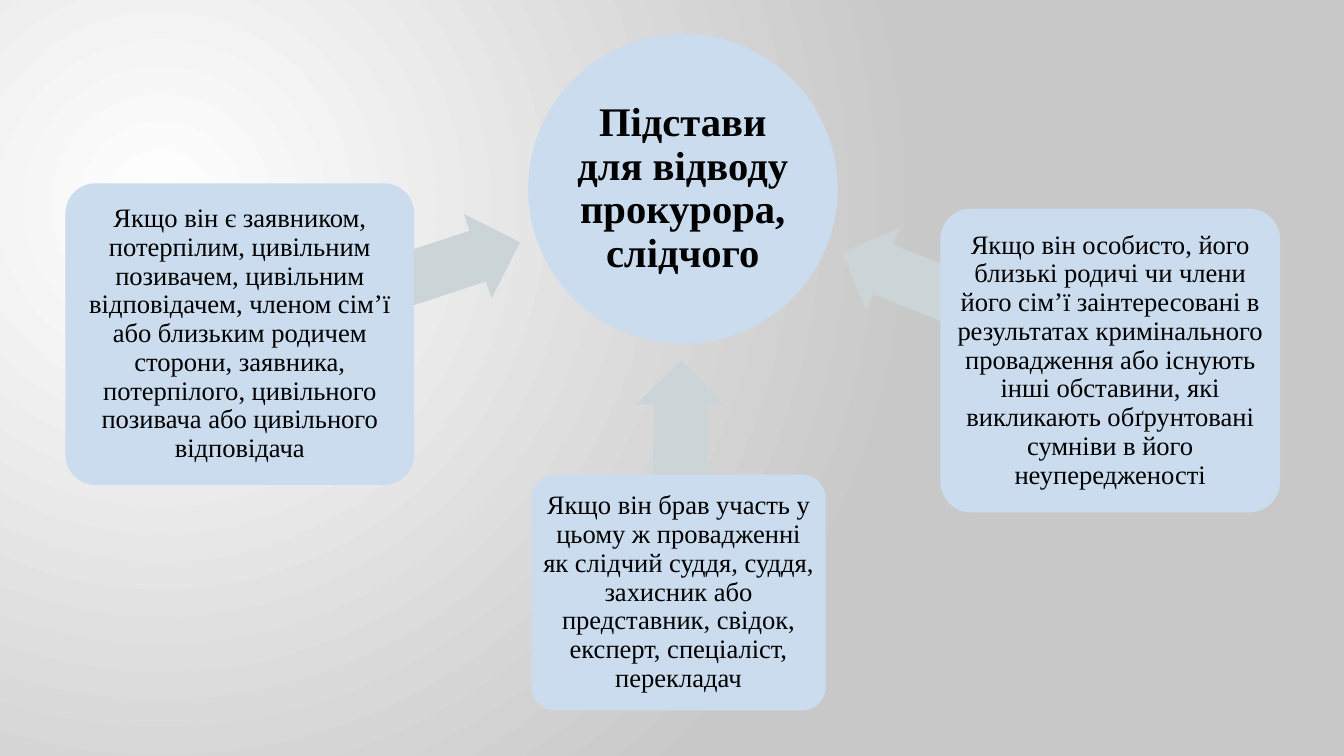
"""Build a slide where three grounds for recusal point to a central circle."""
import math

from lxml import etree
from pptx import Presentation
from pptx import util as u
from pptx.dml.color import RGBColor
from pptx.enum import shapes, text
from pptx.oxml.ns import qn

TOPIC = "Підстави для відводу прокурора, слідчого"
TOPIC_BOX = (13.31, 0.86, 7.8, 7.8)
GROUNDS = [
    ("Якщо він є заявником, потерпілим, цивільним позивачем, цивільним відповідачем, "
     "членом сім’ї або близьким родичем сторони, заявника, потерпілого, цивільного "
     "позивача або цивільного відповідача", (1.65, 4.62, 8.79, 7.6)),
    ("Якщо він брав участь у цьому ж провадженні як слідчий суддя, суддя, захисник або "
     "представник, свідок, експерт, спеціаліст, перекладач", (13.39, 11.96, 7.42, 5.94)),
    ("Якщо він особисто, його близькі родичі чи члени його сім’ї заінтересовані в "
     "результатах кримінального провадження або існують інші обставини, які викликають "
     "обґрунтовані сумніви в його неупередженості", (23.7, 5.26, 8.56, 7.65)),
]
ARROW_HEIGHT = 2.24
ARROW_GAP = 0.42
FONT = "Times New Roman"
BLUE = RGBColor(0xCA, 0xDC, 0xEE)
ARROW_GRAY = RGBColor(0xCB, 0xD4, 0xD7)
BLACK = RGBColor(0, 0, 0)
WHITE = RGBColor(0xFF, 0xFF, 0xFF)
BACKGROUND_GRAY = RGBColor(0xC8, 0xC8, 0xC8)
GLOW_CENTRE = {"l": "50000", "t": "55000", "r": "125000", "b": "100000"}


def set_background(slide):
    fill = slide.background.fill
    fill.gradient()
    for stop, position, color in zip(fill.gradient_stops, (0, 1), (WHITE, BACKGROUND_GRAY)):
        stop.position = position
        stop.color.rgb = color
    gradient = slide.element.find(".//" + qn("a:gradFill"))
    gradient.remove(gradient.find(qn("a:lin")))
    glow = etree.SubElement(gradient, qn("a:path"), {"path": "circle"})
    etree.SubElement(glow, qn("a:fillToRect"), GLOW_CENTRE)


def add_filled(slide, kind, box, color):
    shape = slide.shapes.add_shape(kind, *(u.Cm(value) for value in box))
    shape.shadow.inherit = False
    shape.fill.solid()
    shape.fill.fore_color.rgb = color
    shape.line.fill.background()
    return shape


def write(shape, words, size, inset, bold=False):
    frame = shape.text_frame
    frame.text = words
    frame.word_wrap = True
    frame.vertical_anchor = text.MSO_ANCHOR.MIDDLE
    frame.margin_left = frame.margin_right = u.Cm(inset)
    frame.margin_top = frame.margin_bottom = u.Cm(inset)
    paragraph = frame.paragraphs[0]
    paragraph.alignment = text.PP_ALIGN.CENTER
    paragraph.line_spacing = 0.9
    font = paragraph.runs[0].font
    font.name, font.size, font.bold = FONT, u.Pt(size), bold
    font.color.rgb = BLACK


def centre(box):
    left, top, width, height = box
    return left + width / 2, top + height / 2


def add_arrow(slide, box):
    start_x, start_y = centre(box)
    topic_x, topic_y = centre(TOPIC_BOX)
    angle = math.atan2(topic_y - start_y, topic_x - start_x)
    distance = math.hypot(topic_x - start_x, topic_y - start_y)
    length = distance - TOPIC_BOX[2] / 2 - ARROW_GAP
    middle_x = start_x + length / 2 * math.cos(angle)
    middle_y = start_y + length / 2 * math.sin(angle)
    place = (middle_x - length / 2, middle_y - ARROW_HEIGHT / 2, length, ARROW_HEIGHT)
    arrow = add_filled(slide, shapes.MSO_SHAPE.LEFT_ARROW, place, ARROW_GRAY)
    arrow.adjustments[0] = 0.6
    arrow.adjustments[1] = 0.5
    arrow.rotation = math.degrees(angle) + 180


def main():
    presentation = Presentation()
    presentation.slide_width = u.Cm(33.87)
    presentation.slide_height = u.Cm(19.05)
    slide = presentation.slides.add_slide(presentation.slide_layouts[6])
    set_background(slide)
    circle = add_filled(slide, shapes.MSO_SHAPE.OVAL, TOPIC_BOX, BLUE)
    write(circle, TOPIC, 29, 0.05, bold=True)
    for words, box in GROUNDS:
        add_arrow(slide, box)
        card = add_filled(slide, shapes.MSO_SHAPE.ROUNDED_RECTANGLE, box, BLUE)
        card.adjustments[0] = 0.1
        write(card, words, 19, 0.1)
    presentation.save("out.pptx")


if __name__ == "__main__":
    main()
